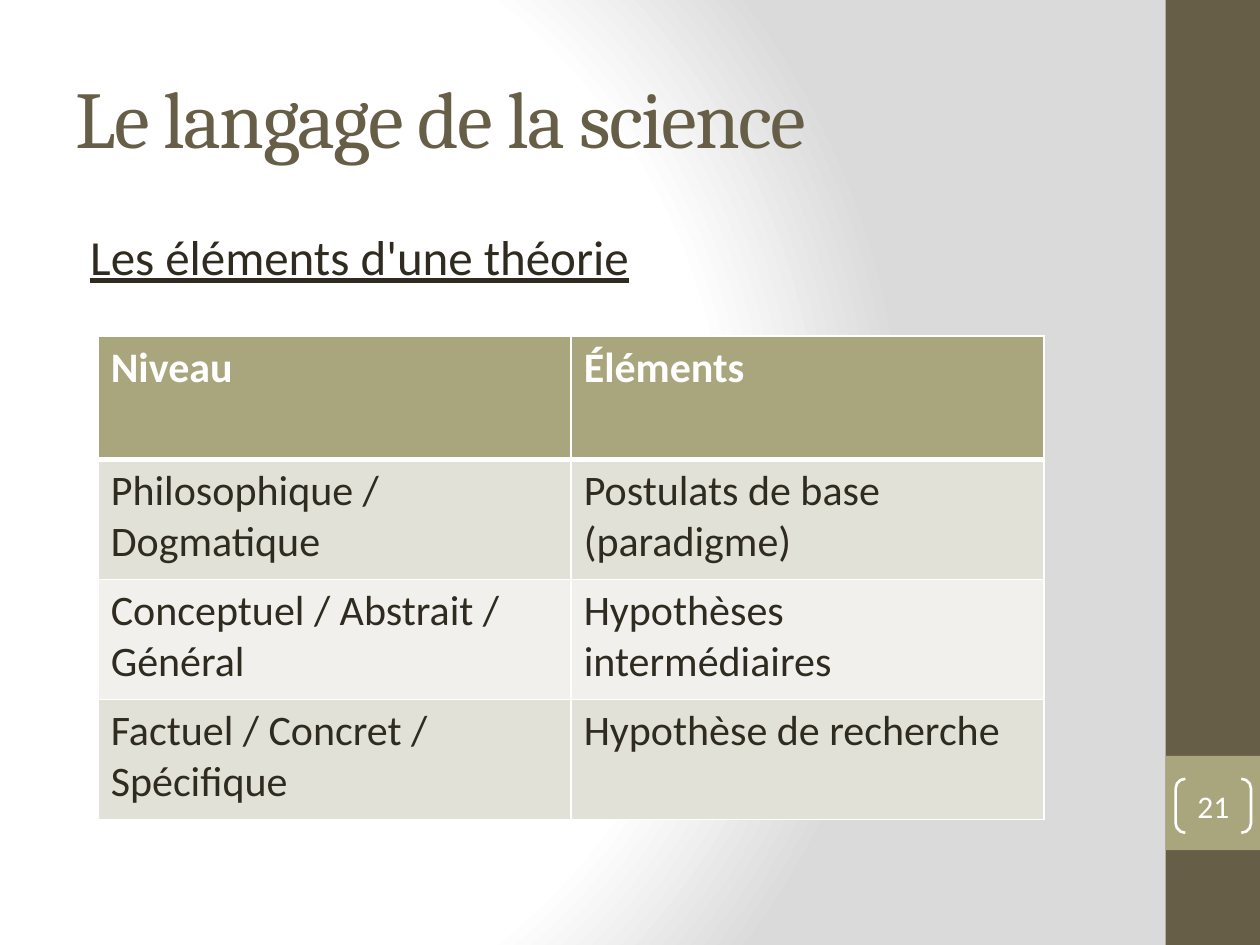
"""Build the slide on the levels and elements of a theory."""
from dataclasses import dataclass

from pptx import Presentation
from pptx.dml.color import RGBColor
from pptx.enum.shapes import MSO_SHAPE as Shp
from pptx.enum.text import MSO_ANCHOR as Anchor, PP_ALIGN as Align
from pptx.oxml import parse_xml
from pptx.oxml.ns import nsdecls, qn
from pptx.util import Cm, Pt

BROWN, OLIVE, INK, WHITE = "675E47", "A9A57C", "2F2B20", "FFFFFF"
BANDS = ("E2E1D7", "F1F0EC")
ROWS = (
    ("Niveau", "Éléments"),
    ("Philosophique / Dogmatique", "Postulats de base (paradigme)"),
    ("Conceptuel / Abstrait / Général", "Hypothèses intermédiaires"),
    ("Factuel / Concret / Spécifique", "Hypothèse de recherche"),
)


@dataclass(frozen=True)
class Box:
    left: float
    top: float
    width: float
    height: float

    def lengths(self) -> tuple:
        return Cm(self.left), Cm(self.top), Cm(self.width), Cm(self.height)


@dataclass(frozen=True)
class Panel:
    box: Box
    color: str


PANELS = (
    Panel(Box(23.5, 0, 1.9, 19.05), BROWN),
    Panel(Box(23.5, 15.24, 1.9, 1.9), OLIVE),
)


def rgb(color: str) -> RGBColor:
    return RGBColor.from_string(color)


def write(tf, text: str, color: str, **fmt):
    """Fill the first paragraph with one formatted run and return the paragraph."""
    p = tf.paragraphs[0]
    r = p.add_run()
    r.text = text
    r.font.color.rgb = rgb(color)
    for name, value in ({"name": "Calibri"} | fmt).items():
        setattr(r.font, name, value)
    return p


def paint_background(s) -> None:
    s.background.fill.solid()
    bg = s.element.find(".//" + qn("p:bgPr"))
    stops = "".join(
        f'<a:gs pos="{pos}"><a:srgbClr val="{color}"/></a:gs>'
        for pos, color in ((0, WHITE), (75000, WHITE), (100000, "DADADA"))
    )
    bg.replace(bg[0], parse_xml(
        f'<a:gradFill {nsdecls("a")} rotWithShape="1"><a:gsLst>{stops}</a:gsLst>'
        '<a:path path="circle"><a:fillToRect l="20000" t="50000" r="100000" b="50000"/>'
        '</a:path></a:gradFill>'
    ))


def add_panel(s, panel: Panel) -> None:
    sp = s.shapes.add_shape(Shp.RECTANGLE, *panel.box.lengths())
    sp.shadow.inherit = False
    sp.fill.solid()
    sp.fill.fore_color.rgb = rgb(panel.color)
    sp.line.fill.background()


def add_title(s, text: str, box: Box) -> None:
    sp = s.shapes.title
    sp.left, sp.top, sp.width, sp.height = box.lengths()
    sp.text_frame.vertical_anchor = Anchor.MIDDLE
    p = write(sp.text_frame, text, BROWN, name="Cambria", size=Pt(46))
    p.alignment = Align.LEFT
    p.runs[0].font._element.set("spc", "-100")


def add_subtitle(s, text: str, box: Box) -> None:
    tf = s.shapes.add_textbox(*box.lengths()).text_frame
    tf.word_wrap = True
    p = write(tf, text, INK, size=Pt(28), underline=True)
    p.space_before = Pt(5.6)
    p._p.get_or_add_pPr().set("marL", str(Cm(0.3)))


def add_borders(cell, top: float, bottom: float) -> None:
    tc_pr = cell._tc.get_or_add_tcPr()
    for side, width in {"L": 1, "R": 1, "T": top, "B": bottom}.items():
        tc_pr.append(parse_xml(
            f'<a:ln{side} {nsdecls("a")} w="{Pt(width)}"><a:solidFill>'
            f'<a:srgbClr val="{WHITE}"/></a:solidFill></a:ln{side}>'
        ))


def add_levels_table(s, box: Box, header_height: float) -> None:
    table = s.shapes.add_table(len(ROWS), len(ROWS[0]), *box.lengths()).table
    for col in table.columns:
        col.width = Cm(box.width / len(ROWS[0]))
    body_height = (box.height - header_height) / (len(ROWS) - 1)
    for i, texts in enumerate(ROWS):
        header = i == 0
        table.rows[i].height = Cm(header_height if header else body_height)
        for j, text in enumerate(texts):
            cell = table.cell(i, j)
            add_borders(cell, top=3 if i == 1 else 1, bottom=3 if header else 1)
            cell.fill.solid()
            cell.fill.fore_color.rgb = rgb(OLIVE if header else BANDS[(i - 1) % 2])
            write(cell.text_frame, text, WHITE if header else INK, size=Pt(24), bold=header)


def add_page_number(s, text: str, box: Box) -> None:
    sp = s.shapes.add_shape(Shp.DOUBLE_BRACKET, *box.lengths())
    sp.shadow.inherit = False
    sp.adjustments[0] = 0.18
    sp.fill.background()
    sp.line.color.rgb = rgb(WHITE)
    sp.line.width = Pt(1.5)
    tf = sp.text_frame
    frame = dict.fromkeys(("margin_left", "margin_top", "margin_right", "margin_bottom"), 0)
    for name, value in (frame | {"vertical_anchor": Anchor.MIDDLE}).items():
        setattr(tf, name, value)
    write(tf, text, WHITE, size=Pt(18)).alignment = Align.CENTER


def main() -> None:
    prs = Presentation()
    prs.slide_width, prs.slide_height = Cm(25.4), Cm(19.05)
    s = prs.slides.add_slide(prs.slide_layouts[5])
    paint_background(s)
    for panel in PANELS:
        add_panel(s, panel)
    add_title(s, "Le langage de la science", Box(1.27, 0.76, 21.16, 3.18))
    add_subtitle(s, "Les éléments d'une théorie", Box(1.27, 4.45, 21.8, 1.6))
    add_levels_table(s, Box(1.98, 6.77, 19.07, 9.75), 2.49)
    add_page_number(s, "21", Box(23.7, 15.7, 1.52, 1.09))
    prs.save("out.pptx")


if __name__ == "__main__":
    main()
